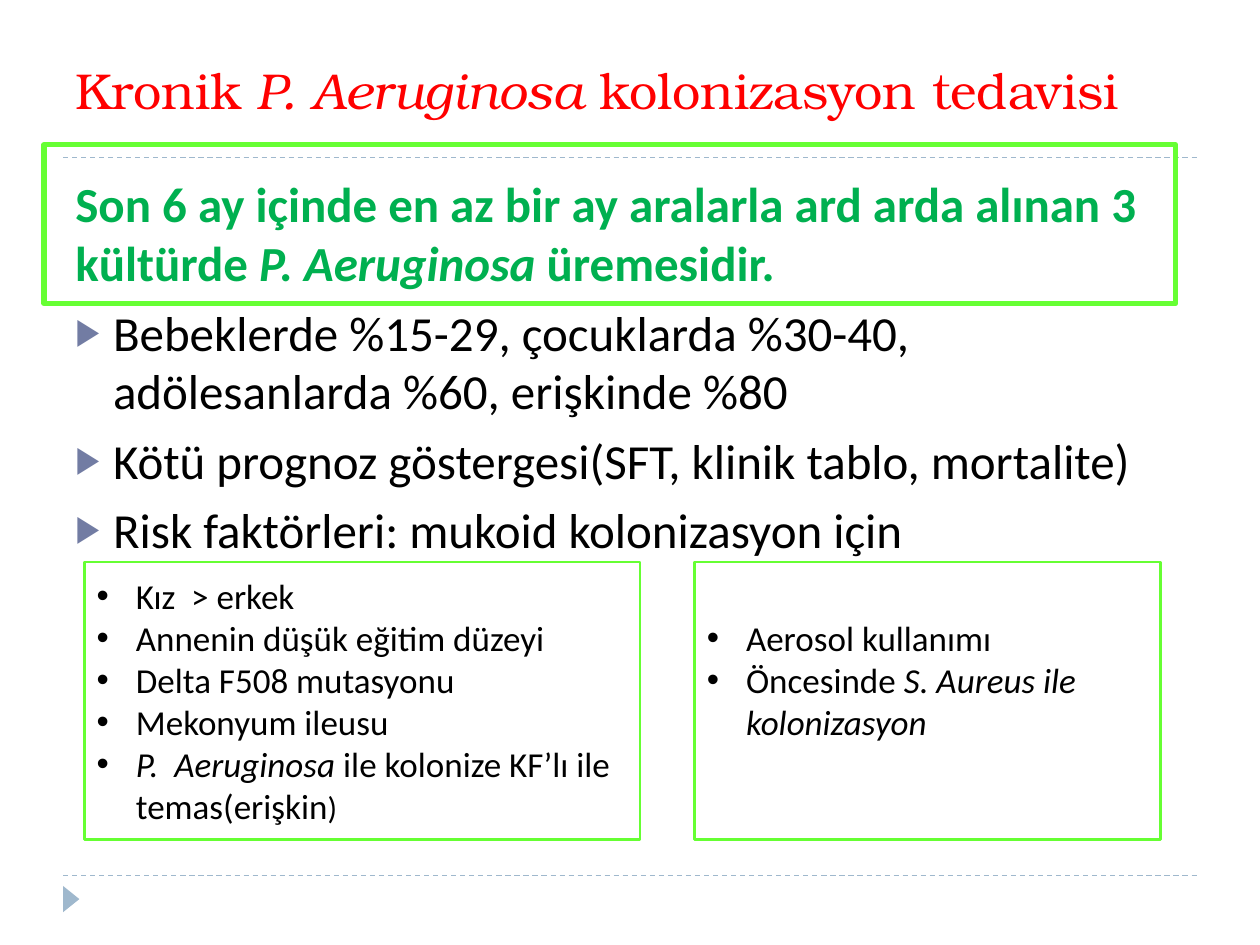
from lxml import etree
from pptx import Presentation
from pptx.dml.color import RGBColor
from pptx.enum.dml import MSO_LINE
from pptx.enum.shapes import MSO_CONNECTOR, MSO_SHAPE
from pptx.enum.text import MSO_ANCHOR, PP_ALIGN
from pptx.oxml.ns import qn
from pptx.util import Cm, Pt

STRAIGHT = MSO_CONNECTOR.STRAIGHT
RECTANGLE, TRIANGLE = MSO_SHAPE.RECTANGLE, MSO_SHAPE.ISOSCELES_TRIANGLE
DASH = MSO_LINE.DASH
TOP, MIDDLE = MSO_ANCHOR.TOP, MSO_ANCHOR.MIDDLE
LEFT = PP_ALIGN.LEFT

COLORS = {"rule": "9FB8CD", "title": "FF0000", "definition": "00B050",
          "text": "000000", "arrow": "727CA3", "frame": "66FF33"}
BODY_FONT, TITLE_FONT = "Calibri", "TeX Gyre Bonum"


def color(name):
    return RGBColor.from_string(COLORS[name])


def add_rule(page, top):
    """Dashed line across the page."""
    rule = page.shapes.add_connector(STRAIGHT, Cm(1.27), Cm(top), Cm(24.13), Cm(top))
    rule.line.color.rgb = color("rule")
    rule.line.width = Pt(0.75)
    rule.line.dash_style = DASH
    etree.SubElement(rule._element.spPr, qn("a:effectLst"))


def add_frame(page, left, top, width, height, weight):
    """Unfilled rectangle with a bright outline."""
    frame = page.shapes.add_shape(RECTANGLE, Cm(left), Cm(top), Cm(width), Cm(height))
    frame.shadow.inherit = False
    frame.fill.background()
    frame.line.color.rgb = color("frame")
    frame.line.width = Pt(weight)
    return frame


def add_text_box(page, left, top, width, height, anchor):
    box = page.shapes.add_textbox(Cm(left), Cm(top), Cm(width), Cm(height))
    box.text_frame.word_wrap = True
    box.text_frame.vertical_anchor = anchor
    return box


def add_bullet(para, char, indent, tint=None, percent=None):
    """Hanging bullet; indent in centimetres."""
    props = para._p.get_or_add_pPr()
    props.set("marL", str(Cm(indent)))
    props.set("indent", str(-Cm(indent)))
    if tint:
        holder = etree.SubElement(props, qn("a:buClr"))
        etree.SubElement(holder, qn("a:srgbClr"), val=COLORS[tint])
    if percent:
        etree.SubElement(props, qn("a:buSzPct"), val=str(percent * 1000))
    etree.SubElement(props, qn("a:buFont"), typeface="Arial")
    etree.SubElement(props, qn("a:buChar"), char=char)


def write_para(para, pieces, size, tint, font=BODY_FONT, bold=False):
    """Write pieces in turn; those that start with * are italic."""
    para.alignment = LEFT
    for piece in pieces:
        span = para.add_run()
        span.text = piece.removeprefix("*")
        span.font.name = font
        span.font.size = Pt(size)
        span.font.bold = bold
        span.font.italic = piece.startswith("*")
        span.font.color.rgb = color(tint)


def next_para(frame, index):
    return frame.add_paragraph() if index else frame.paragraphs[0]


def add_risk_box(page, left, width, items):
    """Framed list of risk factors."""
    box = add_frame(page, left, 11.33, width, 5.59, 1.5)
    frame = box.text_frame
    frame.word_wrap = True
    frame.vertical_anchor = MIDDLE
    for index, pieces in enumerate(items):
        para = next_para(frame, index)
        write_para(para, pieces, 20, "text")
        add_bullet(para, "•", 0.79)
    return box


def main():
    deck = Presentation()
    deck.slide_width, deck.slide_height = Cm(25.4), Cm(19.05)
    page = deck.slides.add_slide(deck.slide_layouts[6])

    # Page decoration
    for top in (17.65, 3.18):
        add_rule(page, top)
    marker = page.shapes.add_shape(TRIANGLE, Cm(1.17), Cm(17.96), Cm(0.53), Cm(0.33))
    marker.rotation = 90
    marker.shadow.inherit = False
    marker.fill.solid()
    marker.fill.fore_color.rgb = color("rule")
    marker.line.fill.background()

    # Title
    title = add_text_box(page, 1.27, 0.43, 22.86, 2.74, MIDDLE)
    write_para(title.text_frame.paragraphs[0],
               ["Kronik", "* P. Aeruginosa ", "kolonizasyon tedavisi"],
               28.8, "title", TITLE_FONT)

    # Definition and key facts
    body = add_text_box(page, 1.27, 3.38, 22.86, 14.35, TOP).text_frame
    write_para(body.paragraphs[0],
               ["Son 6 ay içinde en az bir ay aralarla ard arda alınan 3 kültürde ",
                "*P. Aeruginosa ", "üremesidir."], 28, "definition", bold=True)
    facts = ["Bebeklerde %15-29, çocuklarda %30-40, adölesanlarda %60, erişkinde %80",
             "Kötü prognoz göstergesi(SFT, klinik tablo, mortalite)",
             "Risk faktörleri: mukoid kolonizasyon için"]
    for fact in facts:
        para = body.add_paragraph()
        write_para(para, [fact], 28, "text")
        add_bullet(para, "▶", 0.76, "arrow", 76)
    for para in body.paragraphs:
        para.space_before = Pt(6)

    # Risk factors
    left_box = add_risk_box(page, 1.7, 11.2, [
        ["Kız  > erkek"], ["Annenin düşük eğitim düzeyi"],
        ["Delta F508 mutasyonu"], ["Mekonyum ileusu"],
        ["*P.  Aeruginosa ", "ile kolonize KF’lı ile temas(erişkin", ")"]])
    left_box.text_frame.paragraphs[-1].runs[-1].font.size = Pt(18)
    right_box = add_risk_box(page, 14, 9.4, [
        ["Aerosol kullanımı"], ["Öncesinde ", "*S. Aureus ile kolonizasyon"]])
    right_box.text_frame.margin_bottom = Cm(0.97)

    # Frame around the definition
    add_frame(page, 0.89, 2.92, 22.81, 3.2, 3)

    deck.save("out.pptx")


if __name__ == "__main__":
    main()
